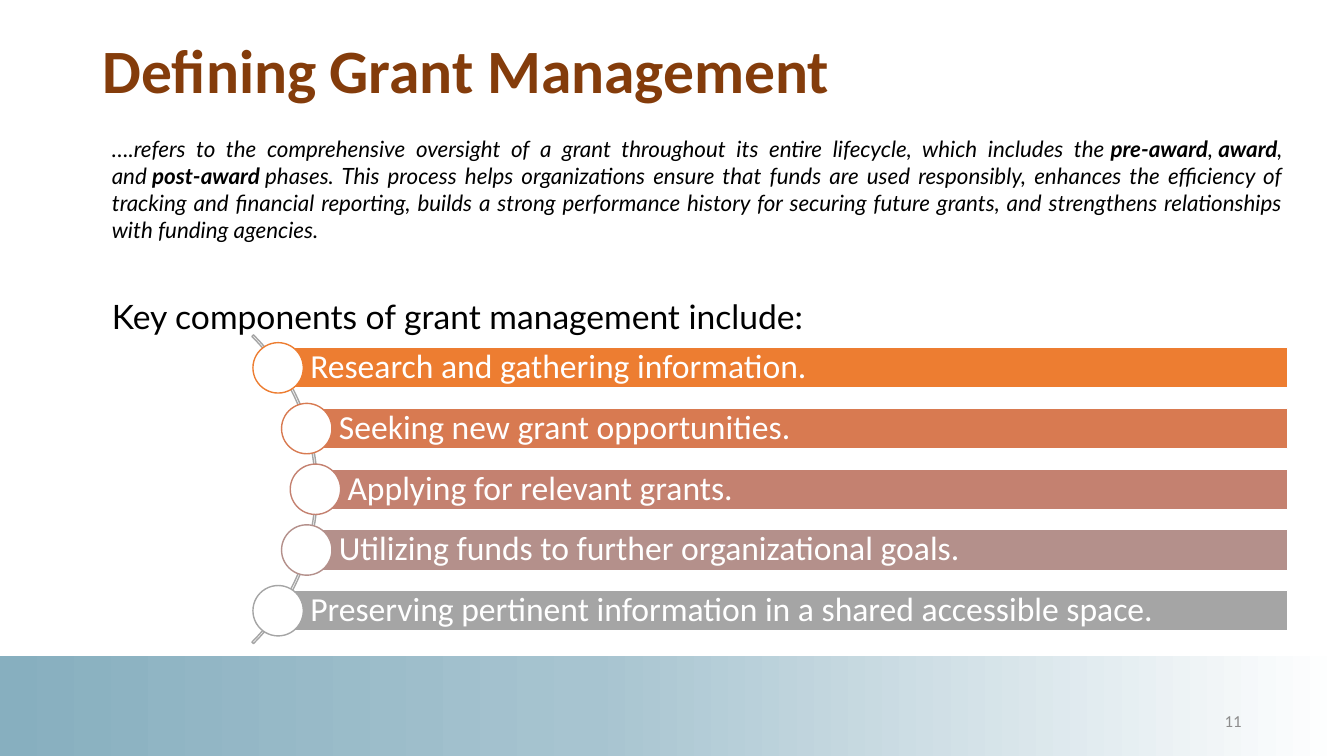
from copy import deepcopy
from math import sqrt

from pptx import Presentation
from pptx.dml.color import RGBColor
from pptx.enum.shapes import MSO_SHAPE as Shape
from pptx.enum.text import MSO_ANCHOR as Anchor, PP_ALIGN as Align
from pptx.util import Cm, Pt

COLORS = {
    "title": "843C0B",
    "text": "000000",
    "white": "FFFFFF",
    "arc": "A5A5A5",
    "number": "8C8C8C",
}
BAND_STOPS = [(0, "FFFFFF"), (0.56, "A7C4D0"), (1, "87AFBF")]
COMPONENTS = [
    ("Research and gathering information.", "ED7D31"),
    ("Seeking new grant opportunities.", "D87A51"),
    ("Applying for relevant grants.", "C48170"),
    ("Utilizing funds to further organizational goals.", "B4908B"),
    ("Preserving pertinent information in a shared accessible space.", "A5A5A5"),
]
NO_BREAK = chr(160)  # space that keeps its neighbours on one line


def add_run(paragraph, text, size, color, font="Calibri", bold=False, italic=False):
    run = paragraph.add_run()
    run.text = text
    run.font.name = font
    run.font.size = Pt(size)
    run.font.bold = bold
    run.font.italic = italic
    run.font.color.rgb = RGBColor.from_string(color)


def add_outlined(kind, left, top, width, height, fill, line):
    shape = slide.shapes.add_shape(kind, Cm(left), Cm(top), Cm(width), Cm(height))
    shape.shadow.inherit = False
    if fill:
        shape.fill.solid()
        shape.fill.fore_color.rgb = RGBColor.from_string(fill)
    else:
        shape.fill.background()
    shape.line.color.rgb = RGBColor.from_string(line)
    shape.line.width = Pt(1)
    return shape


presentation = Presentation()
presentation.slide_width = Cm(33.87)
presentation.slide_height = Cm(19.05)
slide = presentation.slides.add_slide(presentation.slide_layouts[5])

# Gradient band along the foot
band = slide.shapes.add_shape(Shape.RECTANGLE, 0, Cm(16.53), Cm(33.87), Cm(2.52))
band.shadow.inherit = False
band.line.fill.background()
band.fill.gradient()
band.fill.gradient_angle = 180
stop_list = band._element.spPr.xpath("a:gradFill/a:gsLst")[0]
stop_list.append(deepcopy(stop_list[0]))
for stop, (position, color) in zip(band.fill.gradient_stops, BAND_STOPS):
    stop.position = position
    stop.color.rgb = RGBColor.from_string(color)

# Title
title = slide.shapes.title
title.left, title.top, title.width, title.height = Cm(2.33), 0, Cm(29.21), Cm(3.7)
title.text_frame.vertical_anchor = Anchor.MIDDLE
paragraph = title.text_frame.paragraphs[0]
paragraph.alignment = Align.LEFT
paragraph.line_spacing = 0.9
for text, size in [("Defining", 44), (" ", 40), ("Grant Management", 44)]:
    add_run(paragraph, text, size, COLORS["title"], bold=True)

# Definition and lead-in
definition = slide.shapes.add_textbox(Cm(2.57), Cm(3.28), Cm(30), Cm(5.38))
definition.text_frame.word_wrap = True
paragraph = definition.text_frame.paragraphs[0]
paragraph.alignment = Align.JUSTIFY
for text, bold in [
    ("….refers to the comprehensive oversight of a grant throughout its entire "
     f"lifecycle, which includes the{NO_BREAK}", False),
    ("pre-award", True),
    (f",{NO_BREAK}", False),
    ("award", True),
    (f", and{NO_BREAK}", False),
    ("post-award", True),
    (f"{NO_BREAK}phases. This process helps organizations ensure that funds are used "
     "responsibly, enhances the efficiency of tracking and financial reporting, "
     "builds a strong performance history for securing future grants, and "
     "strengthens relationships with funding agencies.", False),
]:
    add_run(paragraph, text, 16, COLORS["text"], "Lato", bold, italic=True)
paragraph = definition.text_frame.add_paragraph()
paragraph.space_before = Pt(38.4)
add_run(paragraph, "Key components of grant management include:", 24, COLORS["text"], "Lato")

# Arc behind the components
center_x, center_y, arc_size = 2.5, 12.33, 11
arc = add_outlined(Shape.BLOCK_ARC, center_x - arc_size / 2, center_y - arc_size / 2,
                   arc_size, arc_size, None, COLORS["arc"])
for index, value in enumerate((189, 27, 0.005)):
    arc.adjustments[index] = value

# Component bars, each starting at a circle centred on the arc
radius, step, bar_height, circle_size, bar_right = 5.45, 1.53, 1.02, 1.27, 32.45
for index, (text, color) in enumerate(COMPONENTS):
    offset = (index - 2) * step
    x = center_x + sqrt(radius ** 2 - offset ** 2)
    y = center_y + offset
    bar = add_outlined(Shape.RECTANGLE, x, y - bar_height / 2, bar_right - x, bar_height,
                       color, COLORS["white"])
    frame = bar.text_frame
    frame.word_wrap = True
    frame.vertical_anchor = Anchor.MIDDLE
    frame.margin_left = Cm(0.81)
    frame.margin_top = frame.margin_right = frame.margin_bottom = Cm(0.17)
    paragraph = frame.paragraphs[0]
    paragraph.alignment = Align.LEFT
    paragraph.line_spacing = 0.9
    add_run(paragraph, text, 24, COLORS["white"])
    add_outlined(Shape.OVAL, x - circle_size / 2, y - circle_size / 2,
                 circle_size, circle_size, COLORS["white"], color)

# Slide number
number = slide.shapes.add_textbox(Cm(23.92), Cm(17.65), Cm(7.62), Cm(1.02))
number.text_frame.word_wrap = True
number.text_frame.vertical_anchor = Anchor.MIDDLE
paragraph = number.text_frame.paragraphs[0]
paragraph.alignment = Align.RIGHT
add_run(paragraph, "11", 12, COLORS["number"])

presentation.save("out.pptx")
